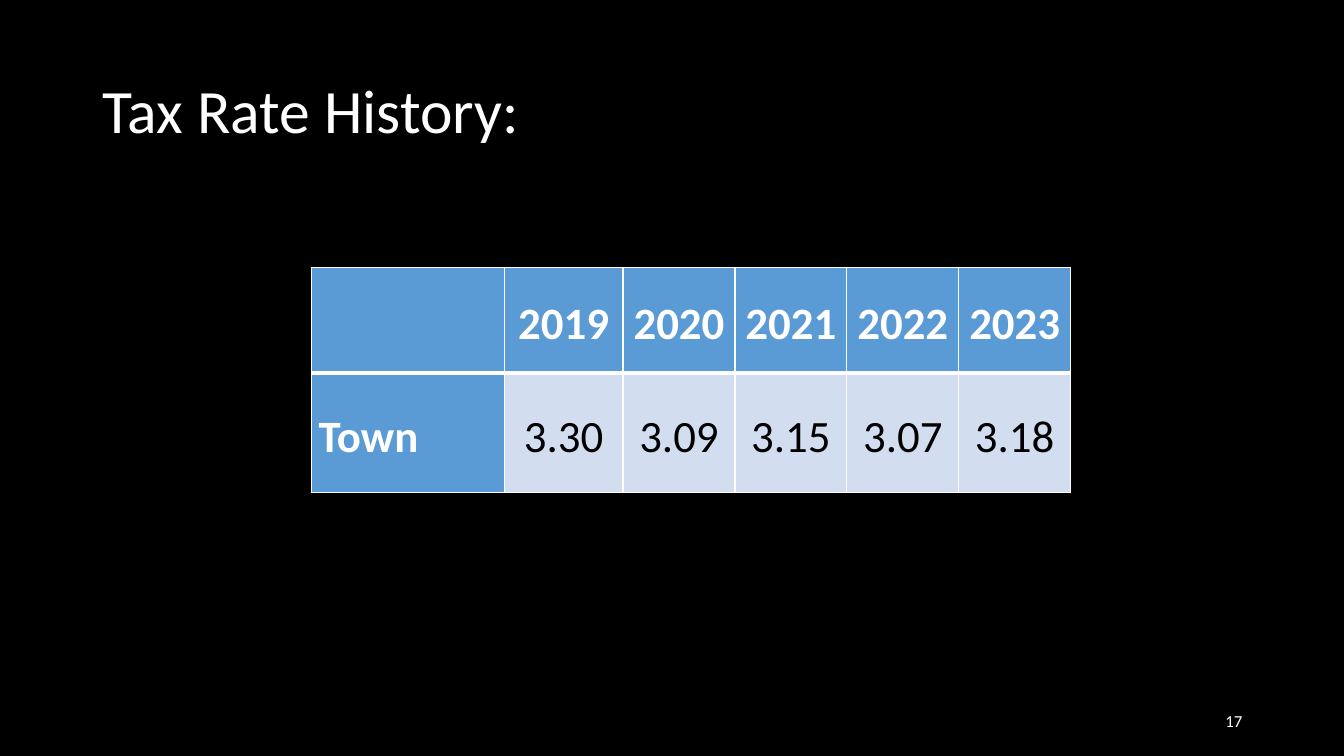
from dataclasses import dataclass

from lxml.etree import SubElement
from pptx import Presentation
from pptx.dml.color import RGBColor
from pptx.enum.text import MSO_ANCHOR, PP_ALIGN
from pptx.oxml.ns import qn
from pptx.slide import Slide
from pptx.table import _Cell
from pptx.text.text import TextFrame
from pptx.util import Emu, Pt

EMU_PER_PX = 9144
FONT = "Calibri"
BLACK = RGBColor(0x00, 0x00, 0x00)
WHITE = RGBColor(0xFF, 0xFF, 0xFF)
HEADER_BLUE = RGBColor(0x5B, 0x9B, 0xD5)
RATE_BLUE = RGBColor(0xD2, 0xDE, 0xEF)

TABLE_LEFT, TABLE_TOP = 309, 265
COLUMN_WIDTHS = [191, 118, 111, 111, 111, 111]
ROW_HEIGHTS = [105, 119]
TAX_RATES = [
    ["", "2019", "2020", "2021", "2022", "2023"],
    ["Town", "3.30", "3.09", "3.15", "3.07", "3.18"],
]
THIN_RULE, HEADER_RULE = 1, 3


@dataclass(frozen=True)
class TextStyle:
    size: int
    color: RGBColor = WHITE
    align: PP_ALIGN = PP_ALIGN.LEFT
    spacing: float = 1.0
    bold: bool = False


@dataclass(frozen=True)
class Label:
    text: str
    left: int
    top: int
    width: int
    height: int
    style: TextStyle


LABELS = [
    Label("Tax Rate History:", 92, 40, 1150, 145, TextStyle(44, spacing=0.9)),
    Label("17", 942, 695, 300, 40, TextStyle(12, align=PP_ALIGN.RIGHT)),
]


def px(length: int) -> Emu:
    return Emu(length * EMU_PER_PX)


def write_text(frame: TextFrame, text: str, style: TextStyle) -> None:
    paragraph = frame.paragraphs[0]
    paragraph.alignment = style.align
    paragraph.line_spacing = style.spacing
    run = paragraph.add_run()
    run.text = text
    run.font.name = FONT
    run.font.size = Pt(style.size)
    run.font.bold = style.bold
    run.font.color.rgb = style.color


def draw_label(slide: Slide, label: Label) -> None:
    box = slide.shapes.add_textbox(
        px(label.left), px(label.top), px(label.width), px(label.height)
    )
    box.text_frame.word_wrap = True
    box.text_frame.vertical_anchor = MSO_ANCHOR.MIDDLE
    write_text(box.text_frame, label.text, label.style)


def draw_borders(cell: _Cell, top: int, bottom: int) -> None:
    properties = cell._tc.get_or_add_tcPr()
    widths = {"lnL": THIN_RULE, "lnR": THIN_RULE, "lnT": top, "lnB": bottom}
    for side, width in widths.items():
        line = SubElement(properties, qn(f"a:{side}"), w=str(Pt(width)))
        fill = SubElement(line, qn("a:solidFill"))
        SubElement(fill, qn("a:srgbClr"), val=str(WHITE))


def draw_cell(cell: _Cell, text: str, is_header: bool, is_town: bool) -> None:
    heading = is_header or is_town
    draw_borders(
        cell,
        THIN_RULE if is_header else HEADER_RULE,
        HEADER_RULE if is_header else THIN_RULE,
    )
    cell.fill.solid()
    cell.fill.fore_color.rgb = HEADER_BLUE if heading else RATE_BLUE
    cell.vertical_anchor = MSO_ANCHOR.MIDDLE
    cell.margin_left = cell.margin_right = px(7)
    cell.margin_top = cell.margin_bottom = 0
    if text:
        style = TextStyle(
            size=32,
            color=WHITE if heading else BLACK,
            align=PP_ALIGN.LEFT if is_town else PP_ALIGN.CENTER,
            spacing=1.15,
            bold=heading,
        )
        write_text(cell.text_frame, text, style)


def draw_tax_rates(slide: Slide) -> None:
    rates = slide.shapes.add_table(
        len(ROW_HEIGHTS), len(COLUMN_WIDTHS), px(TABLE_LEFT), px(TABLE_TOP),
        px(sum(COLUMN_WIDTHS)), px(sum(ROW_HEIGHTS)),
    ).table
    for column, width in zip(rates.columns, COLUMN_WIDTHS):
        column.width = px(width)
    for row, height in zip(rates.rows, ROW_HEIGHTS):
        row.height = px(height)
    for r, entries in enumerate(TAX_RATES):
        for c, text in enumerate(entries):
            draw_cell(rates.cell(r, c), text, r == 0, c == 0)


def main() -> None:
    deck = Presentation()
    deck.slide_width, deck.slide_height = px(1333), px(750)
    slide = deck.slides.add_slide(deck.slide_layouts[6])
    slide.background.fill.solid()
    slide.background.fill.fore_color.rgb = BLACK
    for label in LABELS:
        draw_label(slide, label)
    draw_tax_rates(slide)
    deck.save("out.pptx")


if __name__ == "__main__":
    main()
